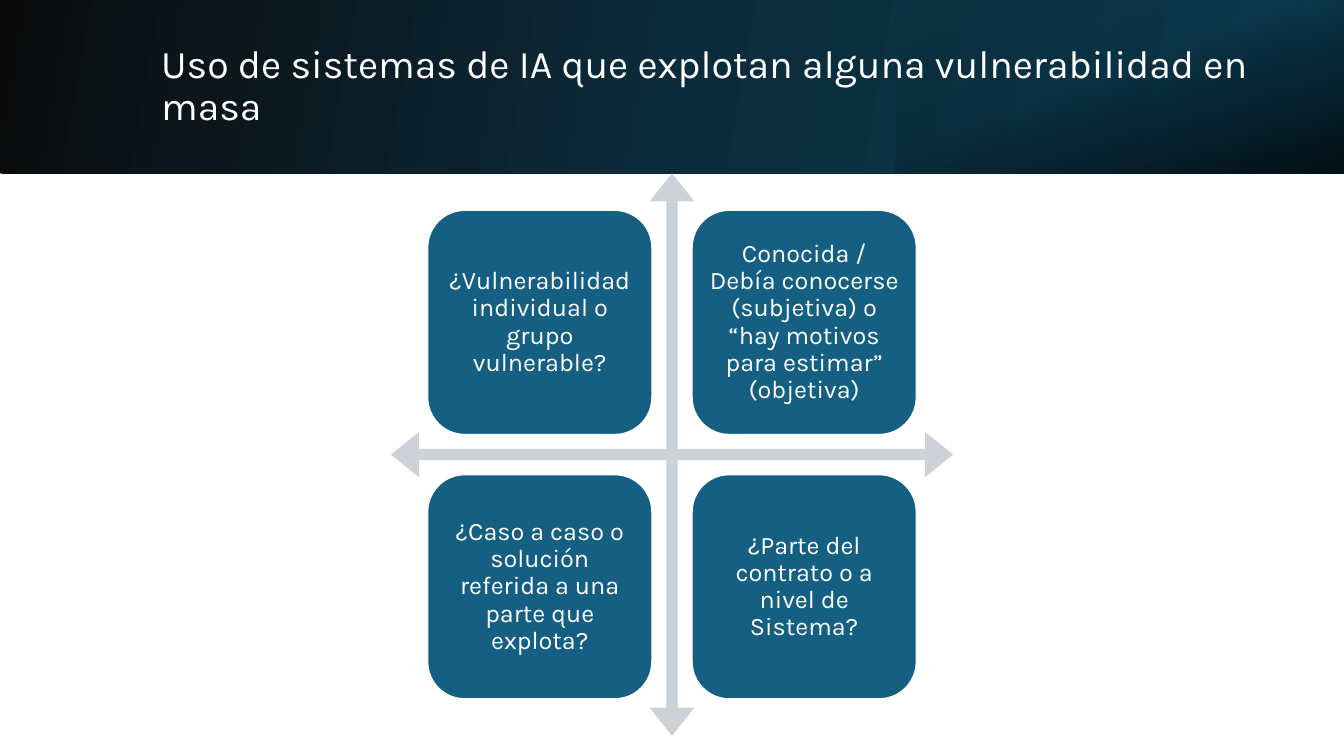
from lxml import etree
from pptx import Presentation
from pptx.dml.color import RGBColor
from pptx.enum.shapes import MSO_SHAPE as Shape
from pptx.enum.text import MSO_ANCHOR as Anchor, PP_ALIGN as Align
from pptx.oxml.ns import qn
from pptx.util import Inches, Pt

TITLE = "Uso de sistemas de IA que explotan alguna vulnerabilidad en masa"
QUADRANTS = [
    ["¿Vulnerabilidad individual o grupo vulnerable?",
     "Conocida / Debía conocerse (subjetiva) o “hay motivos para estimar” (objetiva)"],
    ["¿Caso a caso o solución referida a una parte que explota?",
     "¿Parte del contrato o a nivel de Sistema?"],
]
COLORS = {"white": "FFFFFF", "arrows": "CCD2D8", "card": "156082"}
FONT = "Karla"
WIDTH, HEIGHT = 13.33, 7.5
BANNER_HEIGHT = 1.72
BANNER_LAYERS = [
    (0, WIDTH, 10, [(0, "0A0A0A", 100), (15, "0B151B", 100),
                    (50, "0C2C3B", 100), (100, "0B3A50", 100)]),
    (WIDTH * 2 / 3, WIDTH / 3, 70, [(0, "000000", 0), (45, "000000", 5),
                                    (100, "000000", 75)]),
]
MATRIX = 5.58
MATRIX_LEFT = (WIDTH - MATRIX) / 2
CARD = MATRIX * 0.4
CARD_MARGIN = MATRIX * 0.065
CARD_STEP = MATRIX * 0.47


def color(name):
    return RGBColor.from_string(COLORS[name])


def add_shape(slide, kind, left, top, width, height):
    shape = slide.shapes.add_shape(
        kind, Inches(left), Inches(top), Inches(width), Inches(height))
    shape.shadow.inherit = False
    shape.line.fill.background()
    return shape


def fill_gradient(shape, angle, stops):
    shape.fill.gradient()
    shape.fill.gradient_angle = 360 - angle
    stop_list = shape._element.spPr.find(qn("a:gradFill")).find(qn("a:gsLst"))
    for old_stop in list(stop_list):
        stop_list.remove(old_stop)
    for position, value, opacity in stops:
        stop = etree.SubElement(stop_list, qn("a:gs"), pos=str(position * 1000))
        tint = etree.SubElement(stop, qn("a:srgbClr"), val=value)
        etree.SubElement(tint, qn("a:alpha"), val=str(opacity * 1000))


def write(shape, text, size, align):
    frame = shape.text_frame
    frame.text = text
    frame.word_wrap = True
    frame.vertical_anchor = Anchor.MIDDLE
    paragraph = frame.paragraphs[0]
    paragraph.alignment = align
    paragraph.line_spacing = 0.9
    font = paragraph.runs[0].font
    font.name, font.size = FONT, Pt(size)
    font.color.rgb = color("white")
    return frame


def add_banner(slide):
    for left, width, angle, stops in BANNER_LAYERS:
        layer = add_shape(slide, Shape.RECTANGLE, left, 0, width, BANNER_HEIGHT)
        fill_gradient(layer, angle, stops)
    title = slide.shapes.add_textbox(
        Inches(1.5), Inches(0.38), Inches(10.98), Inches(0.96))
    write(title, TITLE, 28, Align.LEFT)


def add_matrix(slide):
    arrows = add_shape(slide, Shape.QUAD_ARROW, MATRIX_LEFT, BANNER_HEIGHT, MATRIX, MATRIX)
    arrows.fill.solid()
    arrows.fill.fore_color.rgb = color("arrows")
    for index, share in enumerate((0.02, 0.04, 0.05)):
        arrows.adjustments[index] = share
    for row, texts in enumerate(QUADRANTS):
        for column, text in enumerate(texts):
            left = MATRIX_LEFT + CARD_MARGIN + column * CARD_STEP
            top = BANNER_HEIGHT + CARD_MARGIN + row * CARD_STEP
            card = add_shape(slide, Shape.ROUNDED_RECTANGLE, left, top, CARD, CARD)
            card.fill.solid()
            card.fill.fore_color.rgb = color("card")
            card.line.color.rgb = color("white")
            card.line.width = Pt(1.5)
            frame = write(card, text, 18, Align.CENTER)
            frame.margin_left = frame.margin_right = Inches(0.07)
            frame.margin_top = frame.margin_bottom = Inches(0.07)


def main():
    presentation = Presentation()
    presentation.slide_width = Inches(WIDTH)
    presentation.slide_height = Inches(HEIGHT)
    slide = presentation.slides.add_slide(presentation.slide_layouts[6])
    add_banner(slide)
    add_matrix(slide)
    presentation.save("out.pptx")


if __name__ == "__main__":
    main()
